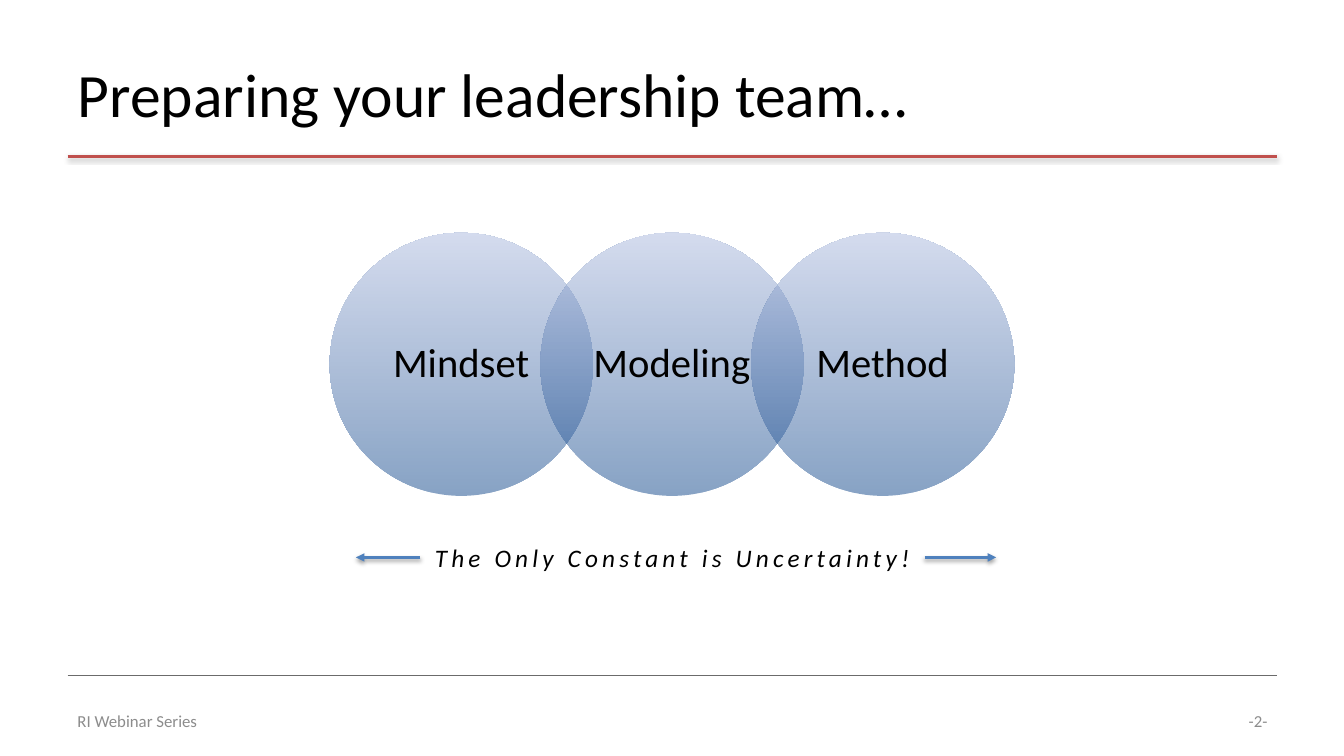
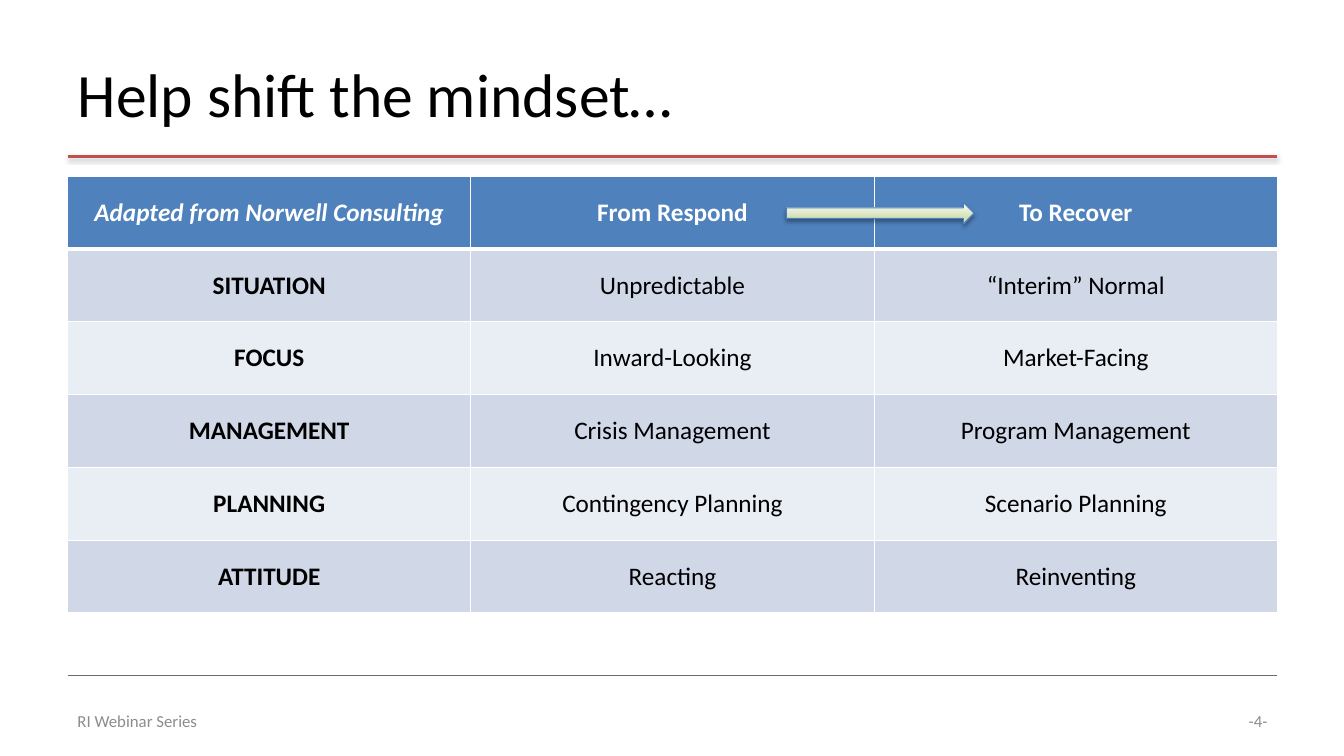
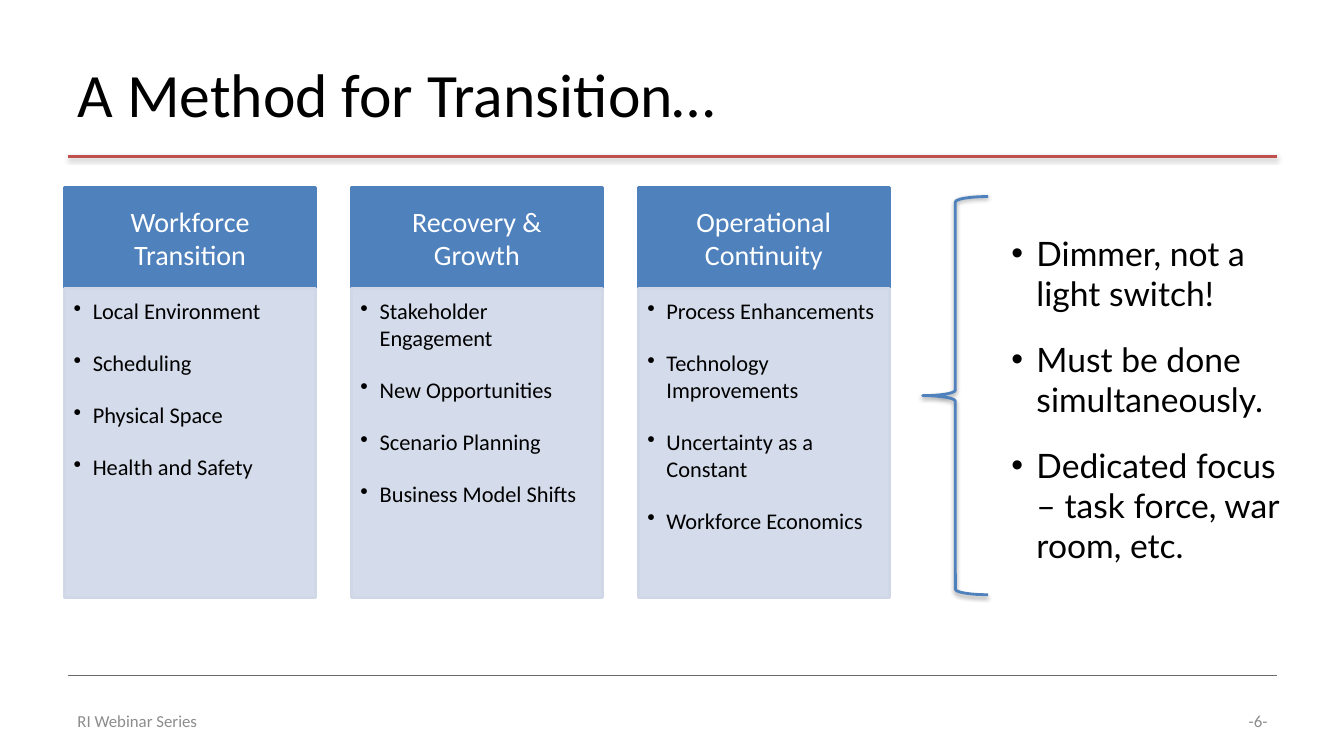
from pptx import Presentation
from pptx.dml.color import RGBColor as Rgb
from pptx.enum.shapes import MSO_CONNECTOR as Link, MSO_SHAPE as Form
from pptx.enum.text import MSO_ANCHOR as Anchor, MSO_AUTO_SIZE as Fit, PP_ALIGN as Align
from pptx.oxml import parse_xml
from pptx.oxml.ns import nsdecls, qn
from pptx.util import Inches, Pt

HUES = {
    "ink": "000000", "white": "FFFFFF", "gray": "8C8C8C", "rule": "6B6B6B",
    "red": "C0504D", "blue": "4F81BD", "edge": "4B7EBC",
    "band": "D0D8E8", "pale": "E9EDF4", "deep": "11478B", "sky": "ABB9DE",
    "mist": "FAFCF7", "leaf": "D2E0B4", "lime": "E1EBCD",
}
NS = nsdecls("a")
MID = {"vertical_anchor": Anchor.MIDDLE, "word_wrap": True, "auto_size": Fit.NONE}
TOP = {**MID, "vertical_anchor": Anchor.TOP}
CENTER = {"alignment": Align.CENTER}
LIST = {"alignment": Align.LEFT, "space_before": Pt(0), "space_after": Pt(18)}


def write(frame, lines, hue, size, box, para, face={}, dent=0):
    for key, val in box.items():
        setattr(frame, key, val)
    for num, line in enumerate(lines):
        par = frame.paragraphs[0] if num == 0 else frame.add_paragraph()
        if dent:
            prop = par._p.get_or_add_pPr()
            prop.set("marL", str(Inches(dent)))
            prop.set("indent", str(-Inches(dent)))
            prop.append(parse_xml(f'<a:buChar {NS} char="•"/>'))
        for key, val in para.items():
            setattr(par, key, val)
        run = par.add_run()
        run.text = line
        look = {"name": "Calibri", "size": Pt(size), **face}
        for key, val in look.items():
            setattr(run.font, key, val)
        run.font.color.rgb = Rgb.from_string(HUES[hue])


def style(shape, hue=None, width=0, stops=(), angle=0, dark=0, drop=1.6):
    spec = shape.element.spPr
    tags = [f'<a:srgbClr val="{HUES[name]}"><a:alpha val="{see * 1000}"/></a:srgbClr>'
            for _, name, see in stops]
    if len(tags) == 1:
        spec.insert(2, parse_xml(f"<a:solidFill {NS}>{tags[0]}</a:solidFill>"))
    elif tags:
        marks = "".join(f'<a:gs pos="{stop[0] * 1000}">{tag}</a:gs>'
                        for stop, tag in zip(stops, tags))
        spec.insert(2, parse_xml(
            f'<a:gradFill {NS} rotWithShape="1"><a:gsLst>{marks}</a:gsLst>'
            f'<a:lin ang="{angle * 60000}" scaled="0"/></a:gradFill>'))
    if hue:
        shape.line.color.rgb = Rgb.from_string(HUES[hue])
        shape.line.width = Pt(width)
    else:
        shape.line.fill.background()
    cast = ""
    if dark:
        cast = (f'<a:outerShdw blurRad="{Pt(3.1)}" dist="{Pt(drop)}" dir="5400000" '
                f'rotWithShape="0"><a:srgbClr val="{HUES["ink"]}">'
                f'<a:alpha val="{dark * 1000}"/></a:srgbClr></a:outerShdw>')
    spec.append(parse_xml(f"<a:effectLst {NS}>{cast}</a:effectLst>"))


deck = Presentation()
deck.slide_width, deck.slide_height = Inches(13.33), Inches(7.5)

pages = []
for title, mark, kind in [
    ("Preparing your leadership team…", "-2-", 5),
    ("Help shift the mindset…", "-4-", 5),
    ("A Method for Transition…", "-6-", 1),
]:
    page = deck.slides.add_slide(deck.slide_layouts[kind])
    pages.append(page)
    for y, hue, width, dark in [(6.7, "rule", 0.75, 0), (1.55, "red", 2, 38)]:
        rule = page.shapes.add_connector(
            Link.STRAIGHT, Inches(0.67), Inches(y), Inches(12.67), Inches(y))
        style(rule, hue, width, dark=dark)
    head = page.shapes.title
    head.left, head.top, head.width, head.height = map(Inches, (0.67, 0.3, 12, 1.25))
    write(head.text_frame, [title], "ink", 44, MID, {"alignment": Align.LEFT})
    for x, wide, text, side in [
        (0.67, 4.22, "RI Webinar Series", Align.LEFT),
        (9.56, 3.11, mark, Align.RIGHT),
    ]:
        foot = page.shapes.add_textbox(Inches(x), Inches(6.95), Inches(wide), Inches(0.4))
        write(foot.text_frame, [text], "gray", 12, MID, {"alignment": side})

team, shift, plan = pages

snug = {**MID, "margin_left": Inches(0.1), "margin_right": Inches(0.1)}
for num, word in enumerate(["Mindset", "Modeling", "Method"]):
    disc = team.shapes.add_shape(
        Form.OVAL, Inches(3.27 + 2.09 * num), Inches(2.31), Inches(2.61), Inches(2.61))
    style(disc, stops=[(0, "deep", 50), (100, "sky", 50)], angle=270)
    write(disc.text_frame, [word], "ink", 29, snug, {**CENTER, "line_spacing": 0.9})

motto = team.shapes.add_textbox(Inches(4.17), Inches(5.33), Inches(5), Inches(0.4))
write(motto.text_frame, ["The Only Constant is Uncertainty!"], "ink", 18,
      {**TOP, "word_wrap": False}, CENTER, {"italic": True})
motto.text_frame.paragraphs[0].runs[0].font._element.set("spc", "300")
for side, start, end in [(3, 9.17, 9.88), (1, 4.17, 3.53)]:
    arm = team.shapes.add_connector(
        Link.STRAIGHT, Inches(start), Inches(5.53), Inches(end), Inches(5.53))
    arm.begin_connect(motto, side)
    style(arm, "blue", 2, dark=38)
    arm.element.spPr.find(qn("a:ln")).append(parse_xml(f'<a:tailEnd {NS} type="triangle"/>'))

rows = [
    ("Adapted from Norwell Consulting", "From Respond", "To Recover"),
    ("SITUATION", "Unpredictable", "“Interim” Normal"),
    ("FOCUS", "Inward-Looking", "Market-Facing"),
    ("MANAGEMENT", "Crisis Management", "Program Management"),
    ("PLANNING", "Contingency Planning", "Scenario Planning"),
    ("ATTITUDE", "Reacting", "Reinventing"),
]
grid = shift.shapes.add_table(
    len(rows), 3, Inches(0.67), Inches(1.75), Inches(12), Inches(4.33)).table
for r, row in enumerate(rows):
    back = "blue" if r == 0 else "band" if r % 2 else "pale"
    for c, text in enumerate(row):
        cell = grid.cell(r, c)
        cell.vertical_anchor = Anchor.MIDDLE
        for side in "LRTB":
            thick = 3 if (r, side) in [(0, "B"), (1, "T")] else 1
            cell._tc.get_or_add_tcPr().append(parse_xml(
                f'<a:ln{side} {NS} w="{Pt(thick)}"><a:solidFill>'
                f'<a:srgbClr val="{HUES["white"]}"/></a:solidFill></a:ln{side}>'))
        cell.fill.solid()
        cell.fill.fore_color.rgb = Rgb.from_string(HUES[back])
        write(cell.text_frame, [text], "ink" if r else "white", 18, {}, CENTER,
              {"bold": r == 0 or c == 0, "italic": r == 0 and c == 0})

arrow = shift.shapes.add_shape(
    Form.RIGHT_ARROW, Inches(7.8), Inches(2.01), Inches(1.86), Inches(0.21))
style(arrow, "edge", 0.75, angle=90, dark=35, drop=1.8, stops=[
    (0, "mist", 100), (74, "leaf", 100), (83, "leaf", 100), (100, "lime", 100)])

cap = {**MID, "margin_left": Inches(0.16), "margin_right": Inches(0.16)}
pad = {**TOP, "margin_left": Inches(0.09), "margin_top": Inches(0.09),
       "margin_right": Inches(0.12), "margin_bottom": Inches(0.14)}
for num, (name, items) in enumerate([
    ("Workforce Transition",
     ["Local Environment", "Scheduling", "Physical Space", "Health and Safety"]),
    ("Recovery & Growth",
     ["Stakeholder Engagement", "New Opportunities", "Scenario Planning",
      "Business Model Shifts"]),
    ("Operational Continuity",
     ["Process Enhancements", "Technology Improvements", "Uncertainty as a Constant",
      "Workforce Economics"]),
]):
    for y, tall, hue, see, lines, tone, size, box, para, dent in [
        (1.86, 1, "blue", 100, [name], "white", 20, cap, CENTER, 0),
        (2.86, 3.07, "band", 90, items, "ink", 16, pad, LIST, 0.19),
    ]:
        card = plan.shapes.add_shape(
            Form.RECTANGLE, Inches(0.64 + 2.845 * num), Inches(y), Inches(2.49), Inches(tall))
        style(card, hue, 2, stops=[(0, hue, see)])
        write(card.text_frame, lines, tone, size, box, para, dent=dent)

body = plan.placeholders[1]
body.left, body.top, body.width, body.height = map(Inches, (9.93, 1.69, 2.92, 4.54))
write(body.text_frame, [
    "Dimmer, not a light switch!",
    "Must be done simultaneously.",
    "Dedicated focus – task force, war room, etc.",
], "ink", 24, MID, LIST, {"name": "Lato"}, 0.25)

brace = plan.shapes.add_shape(
    Form.LEFT_BRACE, Inches(9.15), Inches(1.95), Inches(0.65), Inches(3.95))
brace.fill.background()
style(brace, "blue", 2, dark=38)

deck.save("out.pptx")
